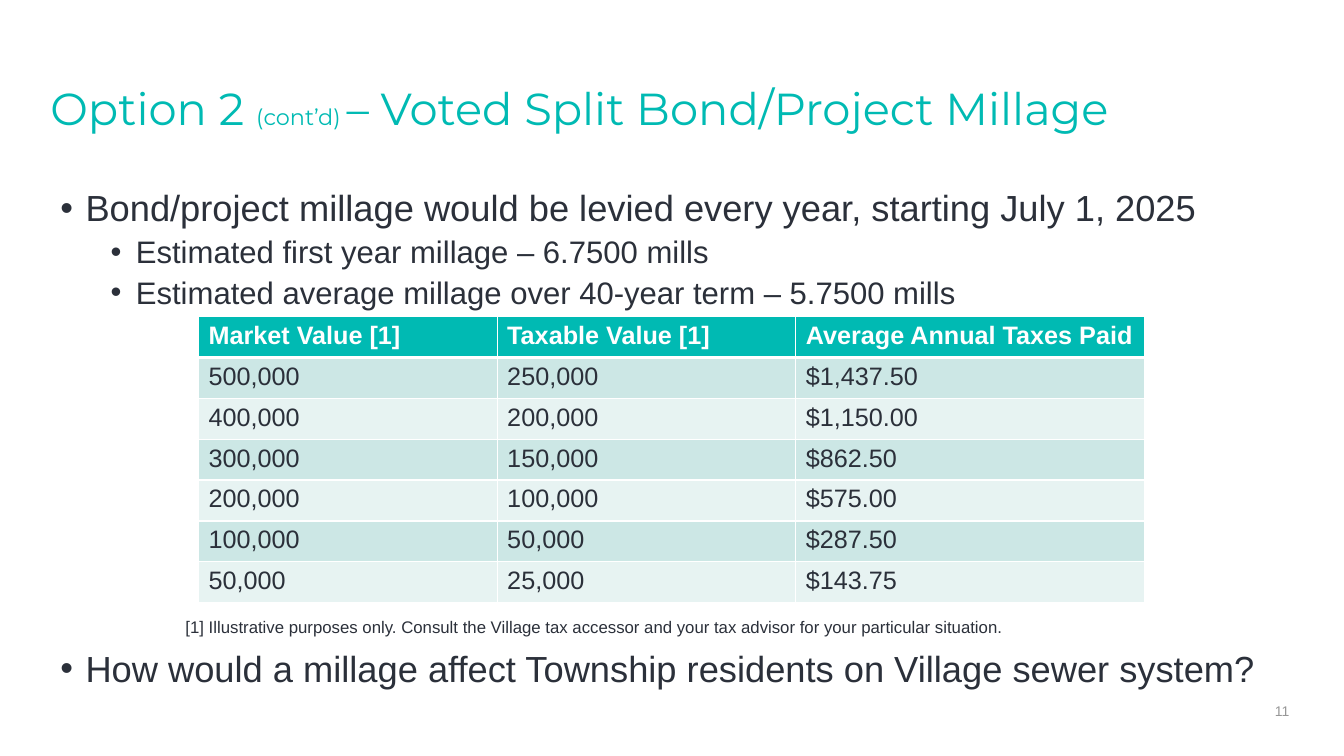
"""Build the Option 2 millage slide with its table of average annual taxes."""
from lxml import etree
from pptx import Presentation
from pptx.dml.color import RGBColor
from pptx.enum.text import MSO_ANCHOR, MSO_AUTO_SIZE, PP_ALIGN
from pptx.oxml.ns import qn
from pptx.util import Emu, Inches, Pt

TOP, MIDDLE = MSO_ANCHOR.TOP, MSO_ANCHOR.MIDDLE
LEFT, CENTER = PP_ALIGN.LEFT, PP_ALIGN.CENTER
NO_FIT = MSO_AUTO_SIZE.NONE

THEME = {
    "teal": "00BAB3", "ink": "2B303A", "grey": "979797", "white": "FFFFFF",
    "bands": ("E7F3F2", "CCE7E5"),
    "head_font": "Montserrat", "body_font": "Arial",
    "title": 32, "aside": 16, "bullet": 25.9, "sub": 22.2,
    "cell": 18, "note": 12, "number": 10,
}
COLS, ROWS = 160, 90

prs = Presentation()
prs.slide_width, prs.slide_height = Inches(40 / 3), Inches(7.5)
CW, RH = prs.slide_width / COLS, prs.slide_height / ROWS
s = prs.slides.add_slide(prs.slide_layouts[5])


def add_run(p, text, size, color="ink", font="body_font", bold=False):
    r = p.add_run()
    r.text = text
    values = {"size": Pt(THEME[size]), "name": THEME[font], "bold": bold}
    for name, value in values.items():
        setattr(r.font, name, value)
    r.font.color.rgb = RGBColor.from_string(THEME[color])


def place(sp, col, row, cols, rows, insets, anchor=TOP):
    box = {"left": col * CW, "top": row * RH, "width": cols * CW, "height": rows * RH}
    for name, value in box.items():
        setattr(sp, name, Emu(round(value)))
    tf = sp.text_frame
    frame = {"word_wrap": True, "auto_size": NO_FIT, "vertical_anchor": anchor}
    sides = ("margin_left", "margin_top", "margin_right", "margin_bottom")
    frame.update(zip(sides, map(Inches, insets)))
    for name, value in frame.items():
        setattr(tf, name, value)
    return tf


tf = place(s.shapes.title, 6, 9.12, 148, 7.08, (0, 0.1, 0, 0))
p = tf.paragraphs[0]
p.alignment, p.line_spacing = LEFT, 0.9
for text, size in (("Option 2 ", "title"), ("(cont’d) ", "aside"),
                   ("– Voted Split Bond/Project Millage", "title")):
    add_run(p, text, size, "teal", "head_font")

texts = [
    (6, 22.08, 148, 15, [
        ("Bond/project millage would be levied every year, starting July 1, 2025", "bullet", 0.25),
        ("Estimated first year millage – 6.7500 mills", "sub", 0.75),
        ("Estimated average millage over 40-year term – 5.7500 mills", "sub", 0.75)]),
    (20.9, 73.1, 120, 3.5, [
        ("[1] Illustrative purposes only. Consult the Village tax accessor and your tax advisor "
         "for your particular situation.", "note", 0)]),
    (6, 76.9, 148, 6, [
        ("How would a millage affect Township residents on Village sewer system?", "bullet", 0.25)]),
]
for col, row, cols, rows, lines in texts:
    tf = place(s.shapes.add_textbox(0, 0, 0, 0), col, row, cols, rows, (0.1, 0.05, 0.1, 0.05))
    for i, (text, size, indent) in enumerate(lines):
        p = tf.add_paragraph() if i else tf.paragraphs[0]
        p.line_spacing, p.space_before = 0.9, Pt(5 if i else 0)
        if indent:
            p.level = int(size == "sub")
            pPr = p._p.get_or_add_pPr()
            pPr.set("marL", str(Inches(indent)))
            pPr.set("indent", str(-Inches(0.25)))
            etree.SubElement(pPr, qn("a:buFont"), typeface="Arial")
            etree.SubElement(pPr, qn("a:buChar"), char="•")
        add_run(p, text, size)

records = [
    ("Market Value [1]", "Taxable Value [1]", "Average Annual Taxes Paid"),
    ("500,000", "250,000", "$1,437.50"),
    ("400,000", "200,000", "$1,150.00"),
    ("300,000", "150,000", "$862.50"),
    ("200,000", "100,000", "$575.00"),
    ("100,000", "50,000", "$287.50"),
    ("50,000", "25,000", "$143.75"),
]
col_spans, row_span = (35.55, 35.55, 41.5), 4.87
table = s.shapes.add_table(
    len(records), len(col_spans), Emu(round(23.64 * CW)), Emu(round(37.68 * RH)),
    Emu(round(sum(col_spans) * CW)), Emu(round(len(records) * row_span * RH))).table
for column, span in zip(table.columns, col_spans):
    column.width = Emu(round(span * CW))
for i, record in enumerate(records):
    fill = THEME["bands"][i % 2] if i else THEME["teal"]
    for j, text in enumerate(record):
        cell = table.cell(i, j)
        add_run(cell.text_frame.paragraphs[0], text, "cell",
                "ink" if i else "white", bold=i == 0)
        tcPr = cell._tc.get_or_add_tcPr()
        for side in "LRTB":
            heavy = (i, side) in ((0, "B"), (1, "T"))
            ln = etree.SubElement(tcPr, qn("a:ln" + side), w=str(Pt(3 if heavy else 1)))
            solid = etree.SubElement(ln, qn("a:solidFill"))
            etree.SubElement(solid, qn("a:srgbClr"), val=THEME["white"])
        cell.fill.solid()
        cell.fill.fore_color.rgb = RGBColor.from_string(fill)

tf = place(s.shapes.add_textbox(0, 0, 0, 0), 150.24, 83.64, 4.8, 2.04, (0, 0, 0, 0), MIDDLE)
p = tf.paragraphs[0]
p.alignment = CENTER
add_run(p, "11", "number", "grey")

prs.save("out.pptx")
